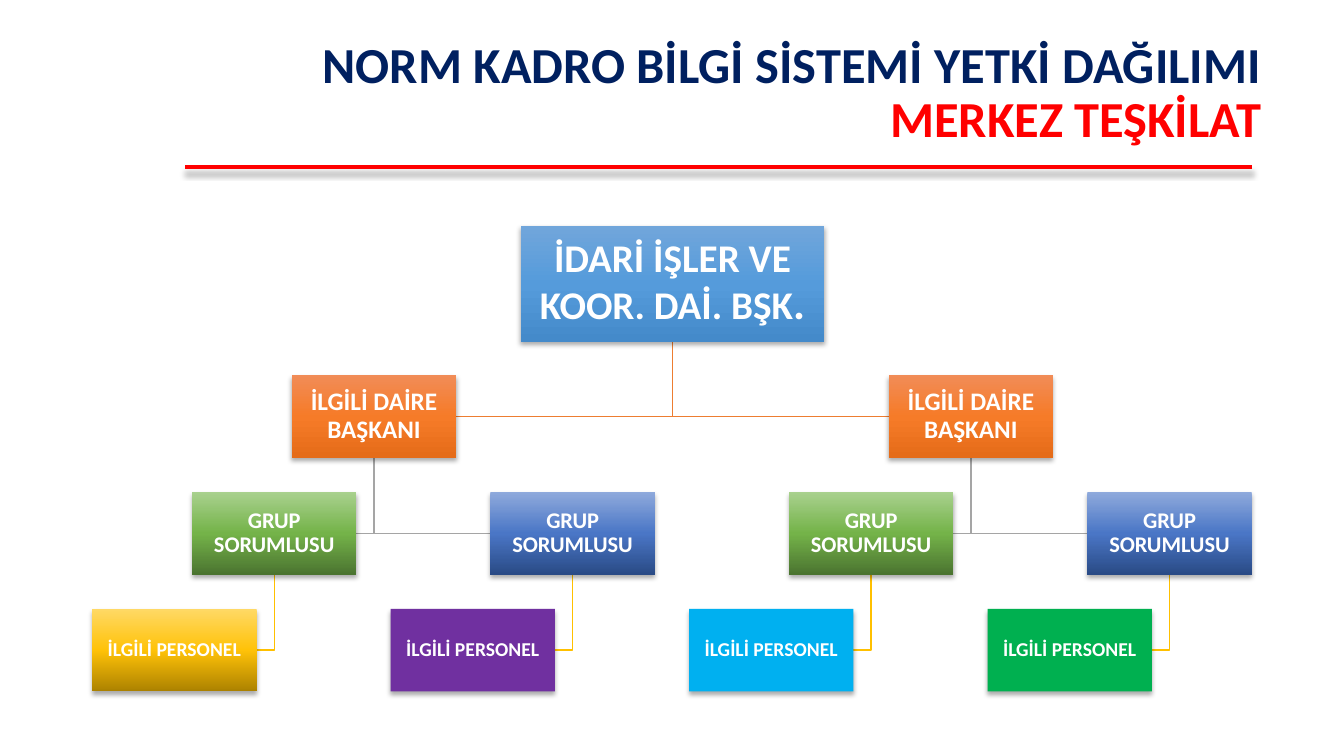
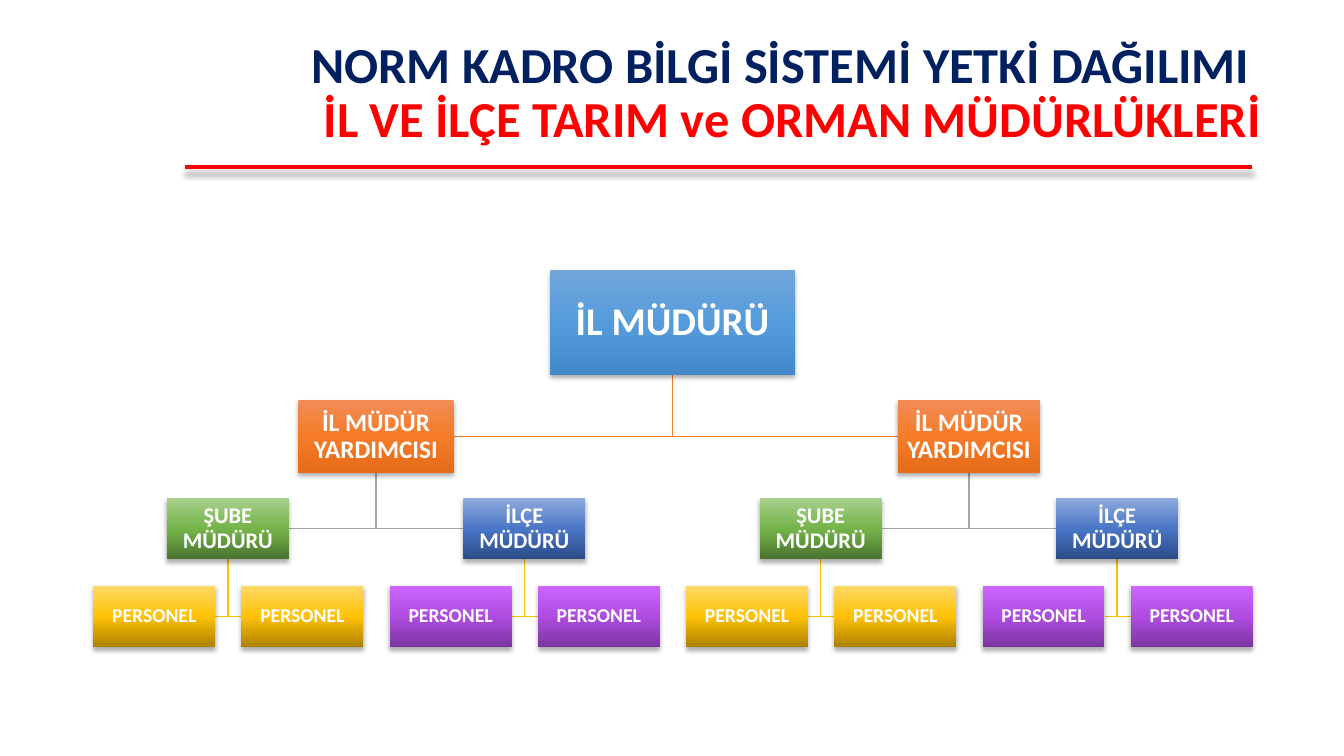
"""Build two slides showing how permissions in the staffing system are distributed."""
from dataclasses import dataclass

from lxml.etree import SubElement
from pptx import Presentation
from pptx.dml.color import RGBColor
from pptx.enum.shapes import MSO_CONNECTOR, MSO_SHAPE
from pptx.enum.text import MSO_ANCHOR, PP_ALIGN
from pptx.oxml.ns import qn
from pptx.util import Inches, Pt


@dataclass(frozen=True)
class Theme:
    font: str = "Calibri"
    navy: str = "002060"
    red: str = "FF0000"
    white: str = "FFFFFF"
    black: str = "000000"
    blue: tuple = ("71A6DB", "559BDB", "448ACA")
    orange: tuple = ("F18C57", "F67B28", "E56C19")
    green: tuple = ("A9D18E", "74B349", "4B7430")
    indigo: tuple = ("8FAADC", "4A76C6", "2A4B86")
    gold: tuple = ("FFD966", "FFC208", "AB8100")
    violet: tuple = ("CC66FF", "AF4CE1", "7B369E")
    purple: tuple = ("7030A0",)
    sky: tuple = ("00B0F0",)
    emerald: tuple = ("00B050",)
    branch_colors: tuple = ("ED7D31", "A5A5A5", "FFC000")
    title_size: int = 36
    level_sizes: tuple = (28, 18, 16, 14)
    full_stop_size: int = 32


theme = Theme()


def add_run(paragraph, text, size, color):
    run = paragraph.add_run()
    run.text = text
    run.font.name = theme.font
    run.font.size = Pt(size)
    run.font.bold = True
    run.font.color.rgb = RGBColor.from_string(color)


def add_shadow(shape, opacity, blur, distance):
    effects = SubElement(shape.element.spPr, qn("a:effectLst"))
    shadow = SubElement(effects, qn("a:outerShdw"), blurRad=str(Pt(blur)), dist=str(Pt(distance)),
                        dir="5400000", algn="ctr", rotWithShape="0")
    color = SubElement(shadow, qn("a:srgbClr"), val=theme.black)
    SubElement(color, qn("a:alpha"), val=str(opacity * 1000))


charts = [
    {
        "title": ("NORM KADRO BİLGİ SİSTEMİ YETKİ DAĞILIMI", "MERKEZ TEŞKİLAT"),
        "levels": [
            {"text": "İDARİ İŞLER VE KOOR. DAİ. BŞK", "ending": ".", "top": 2.24, "height": 1.15,
             "widths": [3.01], "first": 6.67, "step": 0, "paints": [theme.blue]},
            {"text": "İLGİLİ DAİRE BAŞKANI", "top": 3.72, "height": 0.82,
             "widths": [1.63] * 2, "first": 3.71, "step": 5.92, "paints": [theme.orange]},
            {"text": "GRUP SORUMLUSU", "top": 4.88, "height": 0.82,
             "widths": [1.63] * 4, "first": 2.72, "step": 2.96,
             "paints": [theme.green, theme.indigo]},
            {"text": "İLGİLİ PERSONEL", "top": 6.04, "height": 0.82,
             "widths": [1.63] * 4, "first": 1.73, "step": 2.96,
             "paints": [theme.gold, theme.purple, theme.sky, theme.emerald]},
        ],
    },
    {
        "title": ("NORM KADRO BİLGİ SİSTEMİ YETKİ DAĞILIMI ", "İL VE İLÇE TARIM ve ORMAN MÜDÜRLÜKLERİ"),
        "levels": [
            {"text": "İL MÜDÜRÜ", "top": 2.68, "height": 1.04,
             "widths": [2.43], "first": 6.67, "step": 0, "paints": [theme.blue]},
            {"text": "İL MÜDÜR YARDIMCISI", "top": 3.97, "height": 0.72,
             "widths": [1.54, 1.41], "first": 3.73, "step": 5.88, "paints": [theme.orange]},
            {"text": "ŞUBE MÜDÜRÜ", "alternate": "İLÇE MÜDÜRÜ", "top": 4.94, "height": 0.61,
             "widths": [1.21] * 4, "first": 2.26, "step": 2.94,
             "paints": [theme.green, theme.indigo]},
            {"text": "PERSONEL", "top": 5.81, "height": 0.61,
             "widths": [1.21] * 8, "first": 1.53, "step": 1.47,
             "paints": [theme.gold, theme.gold, theme.violet, theme.violet]},
        ],
    },
]

deck = Presentation()
deck.slide_width = Inches(13.33)
deck.slide_height = Inches(7.5)

for chart in charts:
    slide = deck.slides.add_slide(deck.slide_layouts[6])
    levels = chart["levels"]

    title_rule = slide.shapes.add_connector(
        MSO_CONNECTOR.STRAIGHT, Inches(12.42), Inches(1.66), Inches(1.84), Inches(1.66))
    title_rule.line.color.rgb = RGBColor.from_string(theme.red)
    title_rule.line.width = Pt(3)
    add_shadow(title_rule, 25, 4, 4)

    title = slide.shapes.add_textbox(Inches(1.11), Inches(0.4), Inches(11.5), Inches(1.07))
    title.text_frame.word_wrap = True
    title.text_frame.vertical_anchor = MSO_ANCHOR.MIDDLE
    heading = title.text_frame.paragraphs[0]
    heading.alignment = PP_ALIGN.RIGHT
    heading.line_spacing = 0.9
    system_name, organisation = chart["title"]
    add_run(heading, system_name, theme.title_size, theme.navy)
    heading.add_line_break()
    add_run(heading, organisation, theme.title_size, theme.red)

    for parents, children, branch_color in zip(levels, levels[1:], theme.branch_colors):
        start_y = parents["top"] + parents["height"]
        end_y = children["top"] + children["height"] / 2
        for index, width in enumerate(children["widths"]):
            parent_index = index * len(parents["widths"]) // len(children["widths"])
            parent_x = parents["first"] + parent_index * parents["step"]
            child_x = children["first"] + index * children["step"]
            side_x = child_x - width / 2 if child_x > parent_x else child_x + width / 2
            route = slide.shapes.build_freeform(Inches(parent_x), Inches(start_y))
            route.add_line_segments(
                [(Inches(parent_x), Inches(end_y)), (Inches(side_x), Inches(end_y))], close=False)
            branch = route.convert_to_shape()
            branch.fill.background()
            branch.line.color.rgb = RGBColor.from_string(branch_color)
            branch.line.width = Pt(1)
            branch.shadow.inherit = False

    for level, size in zip(levels, theme.level_sizes):
        for index, width in enumerate(level["widths"]):
            left = level["first"] + index * level["step"] - width / 2
            post = slide.shapes.add_shape(MSO_SHAPE.RECTANGLE, Inches(left), Inches(level["top"]),
                                          Inches(width), Inches(level["height"]))
            paint = level["paints"][index % len(level["paints"])]
            if len(paint) == 1:
                post.fill.solid()
                post.fill.fore_color.rgb = RGBColor.from_string(paint[0])
            else:
                post.fill.gradient()
                post.fill.gradient_angle = 270
                stops = post.element.spPr.find(qn("a:gradFill")).find(qn("a:gsLst"))
                for stop in list(stops):
                    stops.remove(stop)
                for position, color in zip((0, 50000, 100000), paint):
                    stop = SubElement(stops, qn("a:gs"), pos=str(position))
                    SubElement(stop, qn("a:srgbClr"), val=color)
            post.line.fill.background()
            add_shadow(post, 32, 3.5, 2.2)

            frame = post.text_frame
            frame.word_wrap = True
            frame.vertical_anchor = MSO_ANCHOR.MIDDLE
            inset = Inches(0.02 if level is levels[0] else 0.01)
            frame.margin_left = frame.margin_right = inset
            frame.margin_top = frame.margin_bottom = inset
            label = frame.paragraphs[0]
            label.alignment = PP_ALIGN.CENTER
            label.line_spacing = 0.9
            text = level.get("alternate", level["text"]) if index % 2 else level["text"]
            add_run(label, text, size, theme.white)
            if "ending" in level:
                add_run(label, level["ending"], theme.full_stop_size, theme.white)

deck.save("out.pptx")
